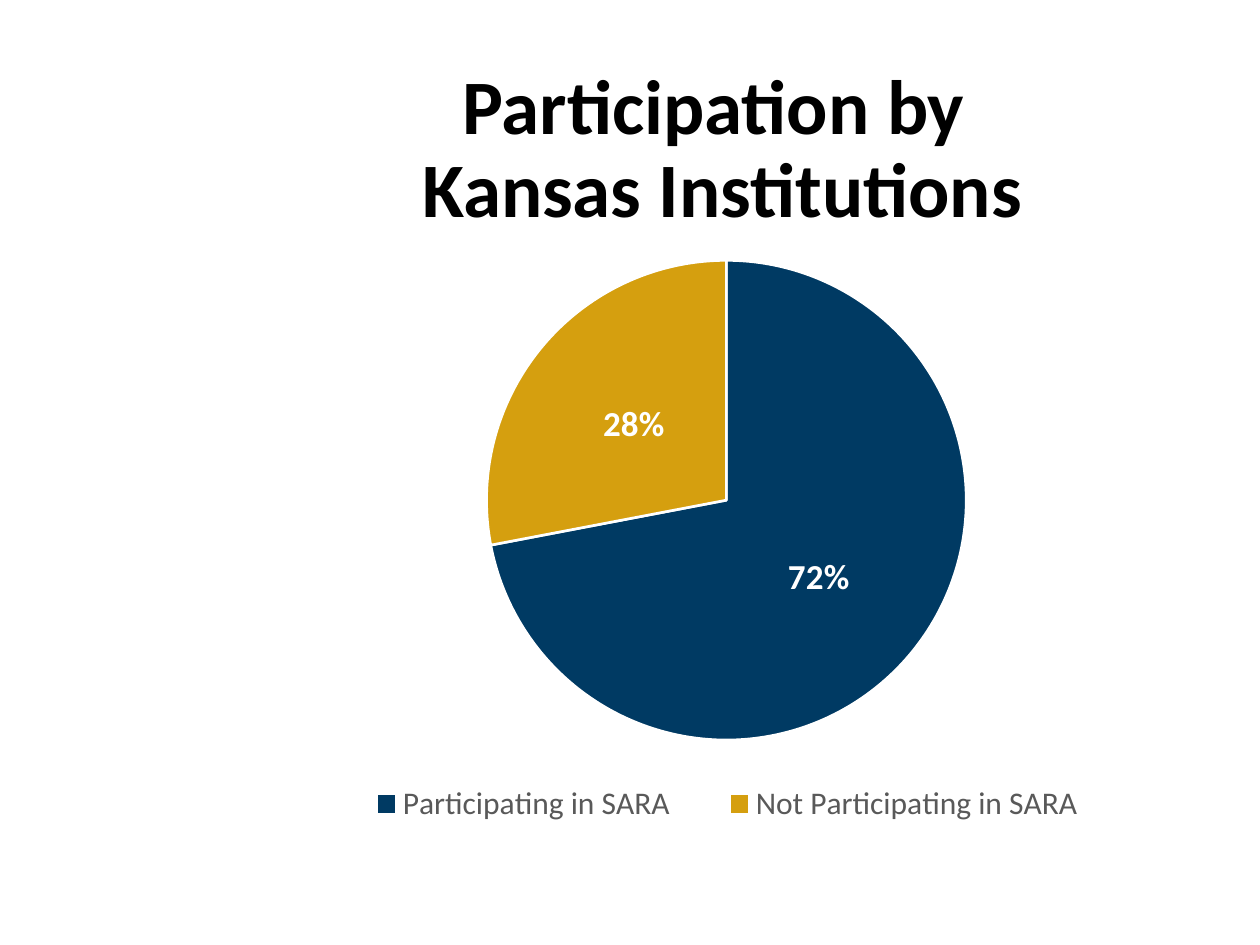
"""Build the slide on participation by Kansas institutions."""
from dataclasses import dataclass

from lxml.etree import SubElement
from pptx import Presentation
from pptx.chart.data import CategoryChartData
from pptx.dml.color import RGBColor
from pptx.enum.chart import XL_CHART_TYPE, XL_LABEL_POSITION, XL_LEGEND_POSITION
from pptx.enum.text import MSO_ANCHOR, PP_ALIGN
from pptx.oxml import parse_xml
from pptx.oxml.ns import nsdecls, qn
from pptx.util import Inches, Pt

COLORS = {"navy": "003A63", "gold": "D59F0F", "white": "FFFFFF",
          "black": "000000", "gray": "595959"}
FACE = "Calibri"
LEFT, WIDTH = Inches(1.91), Inches(7.65)


@dataclass
class Slice:
    """One slice of the pie."""
    name: str
    share: int
    color: str


SLICES = [Slice("Participating in SARA", 72, "navy"),
          Slice("Not Participating in SARA", 28, "gold")]


def tint(name: str) -> RGBColor:
    """Look up a named color."""
    return RGBColor.from_string(COLORS[name])


def style(font, size: float, color: str, bold: bool = False) -> None:
    """Set face, size, color and weight of a font."""
    font.name, font.size, font.bold = FACE, Pt(size), bold
    font.color.rgb = tint(color)


def place(box: tuple, inner: bool = False):
    """Return a manual chart layout for fractions of the chart area."""
    root = parse_xml(f"<c:layout {nsdecls('c')}><c:manualLayout/></c:layout>")
    rules = [("layoutTarget", "inner")] if inner else []
    rules += [("xMode", "edge"), ("yMode", "edge"), *zip("xywh", box)]
    for tag, val in rules:
        SubElement(root[0], qn(f"c:{tag}")).set("val", str(val))
    return root


def draw_title(slide) -> None:
    """Write the two-line title."""
    title = slide.shapes.title
    title.left, title.top = LEFT, Inches(0.4)
    title.width, title.height = WIDTH, Inches(1.6)
    frame = title.text_frame
    frame.word_wrap = True
    frame.vertical_anchor = MSO_ANCHOR.MIDDLE
    para = frame.paragraphs[0]
    para.alignment, para.line_spacing = PP_ALIGN.CENTER, 0.9
    for i, line in enumerate(("Participation by ", "Kansas Institutions")):
        if i:
            para.add_line_break()
        run = para.add_run()
        run.text = line
        style(run.font, 44, "black", True)


def draw_pie(slide, slices: list[Slice]) -> None:
    """Draw the pie chart with its labels and legend."""
    data = CategoryChartData()
    data.categories = [s.name for s in slices]
    data.add_series("Series 1", [s.share for s in slices])
    chart = slide.shapes.add_chart(XL_CHART_TYPE.PIE, LEFT, Inches(2),
                                   WIDTH, Inches(4.76), data).chart
    style(chart.font, 10, "black")
    chart.has_title = False
    plot = chart.plots[0]
    plot.vary_by_categories = True
    for i, part in enumerate(slices):
        form = plot.series[0].points[i].format
        form.fill.solid()
        form.fill.fore_color.rgb = tint(part.color)
        form.line.color.rgb = tint("white")
        form.line.width = Pt(1.5)

    plot.has_data_labels = True
    labels = plot.data_labels
    labels.show_percentage, labels.show_value = True, False
    labels.number_format, labels.number_format_is_linked = "0%", False
    labels.position = XL_LABEL_POSITION.CENTER
    style(labels.font, 20, "white", True)

    chart.has_legend = True
    legend = chart.legend
    legend.position = XL_LEGEND_POSITION.BOTTOM
    legend.include_in_layout = False
    style(legend.font, 18, "gray")

    area = chart.element.find(".//" + qn("c:plotArea"))
    for old in area.findall(qn("c:layout")):
        area.remove(old)
    area.insert(0, place((0.255, 0.014, 0.498, 0.8), inner=True))
    key = chart.element.find(".//" + qn("c:legend"))
    for old in key.findall(qn("c:layout")):
        key.remove(old)
    key.find(qn("c:legendPos")).addnext(place((0.09, 0.87, 0.83, 0.1)))


def main() -> None:
    """Build and save the slide."""
    deck = Presentation()
    deck.slide_width, deck.slide_height = Inches(10), Inches(7.5)
    slide = deck.slides.add_slide(deck.slide_layouts[5])
    draw_title(slide)
    draw_pie(slide, SLICES)
    deck.save("out.pptx")


if __name__ == "__main__":
    main()
